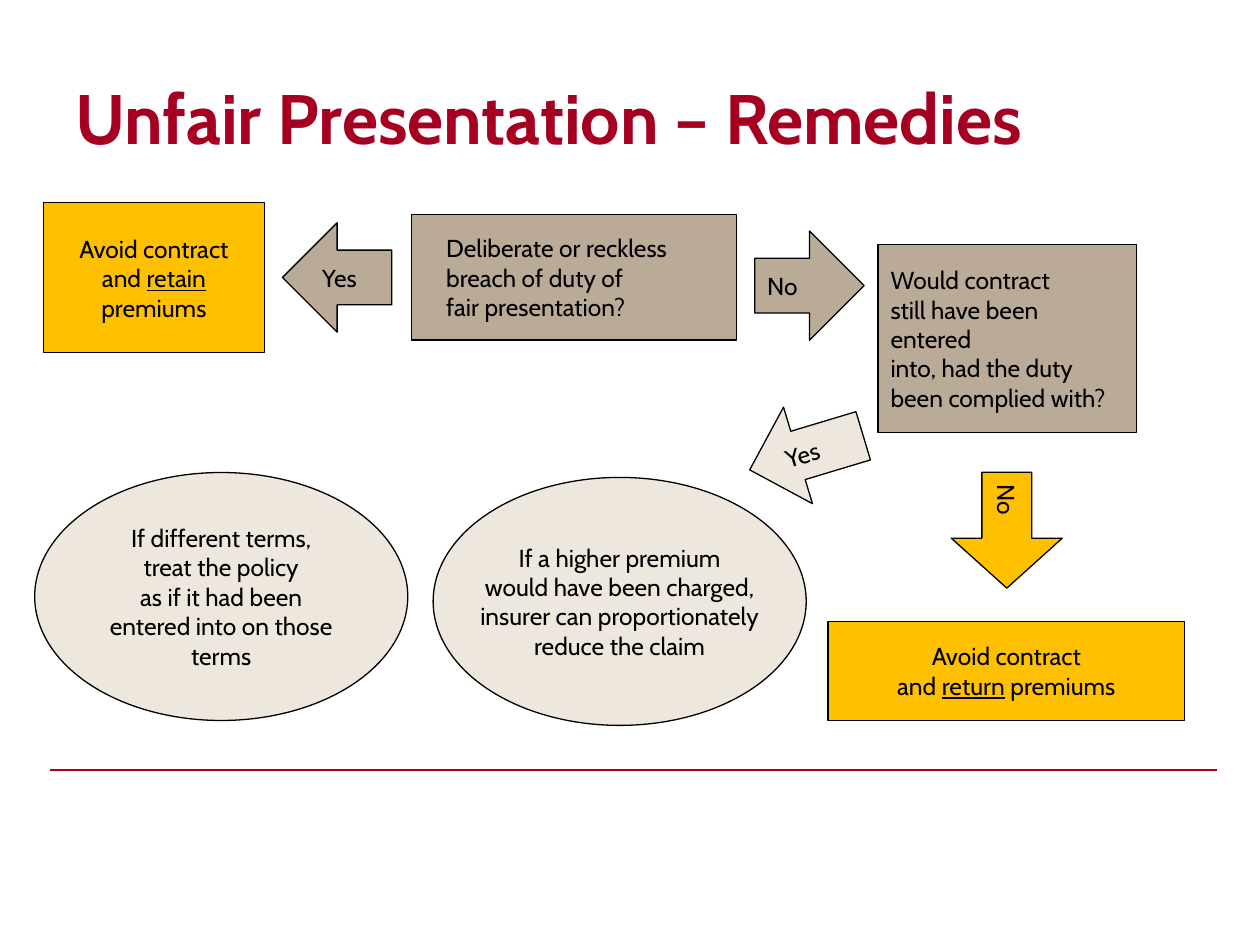
from dataclasses import dataclass

from pptx import Presentation
from pptx.dml.color import RGBColor
from pptx.enum.shapes import MSO_CONNECTOR, MSO_SHAPE as Form
from pptx.enum.text import MSO_ANCHOR as Anchor, PP_ALIGN as Align
from pptx.oxml.ns import qn
from pptx.util import Pt
from lxml.etree import SubElement


@dataclass(frozen=True)
class Theme:
    font: str = "Cabin"
    title_size: float = 40
    body_size: float = 14
    outline_width: float = 0.75
    rule_width: float = 1.5
    crimson: str = "A50021"
    ink: str = "000000"
    question: str = "B9AB97"
    outcome: str = "FFC000"
    option: str = "EDE7DD"


class RemediesSlide:
    """Holds the theme and the slide being drawn; lengths are in points."""

    def __init__(self, deck, theme):
        self.theme = theme
        self.slide = deck.slides.add_slide(deck.slide_layouts[5])

    def style(self, paragraph, size, color, align, bold=False):
        paragraph.alignment = align
        font = paragraph.font
        font.name, font.size, font.bold = self.theme.font, Pt(size), bold
        font.color.rgb = RGBColor.from_string(color)

    def title(self, text, left, top, width, height):
        holder = self.slide.shapes.title
        holder.left, holder.top = Pt(left), Pt(top)
        holder.width, holder.height = Pt(width), Pt(height)
        frame = holder.text_frame
        frame.text, frame.vertical_anchor = text, Anchor.MIDDLE
        self.style(frame.paragraphs[0], self.theme.title_size,
                   self.theme.crimson, Align.LEFT, bold=True)

    def rule(self, left, right, y):
        line = self.slide.shapes.add_connector(
            MSO_CONNECTOR.STRAIGHT, Pt(left), Pt(y), Pt(right), Pt(y))
        line.line.color.rgb = RGBColor.from_string(self.theme.crimson)
        line.line.width = Pt(self.theme.rule_width)
        SubElement(line._element.spPr, qn("a:effectLst"))

    def node(self, form, box, fill, lines, align=Align.LEFT, inset=7.2,
             rotation=0, adjustments=()):
        """Draw a filled shape; words between underscores are underlined."""
        shape = self.slide.shapes.add_shape(form, *map(Pt, box))
        shape.shadow.inherit = False
        shape.rotation = rotation
        for index, value in enumerate(adjustments):
            shape.adjustments[index] = value
        shape.fill.solid()
        shape.fill.fore_color.rgb = RGBColor.from_string(fill)
        shape.line.color.rgb = RGBColor.from_string(self.theme.ink)
        shape.line.width = Pt(self.theme.outline_width)

        frame = shape.text_frame
        frame.word_wrap, frame.vertical_anchor = False, Anchor.MIDDLE
        frame.margin_left = Pt(inset)
        for index, line in enumerate(lines):
            paragraph = frame.add_paragraph() if index else frame.paragraphs[0]
            self.style(paragraph, self.theme.body_size, self.theme.ink, align)
            for part, words in enumerate(line.split("_")):
                if words:
                    run = paragraph.add_run()
                    run.text = words
                    if part % 2:
                        run.font.underline = True


def main():
    deck = Presentation()
    deck.slide_width, deck.slide_height = Pt(720), Pt(540)
    theme = Theme()
    page = RemediesSlide(deck, theme)

    # Heading and footer rule
    page.rule(28.8, 695.5, 440)
    page.title("Unfair Presentation – Remedies", 36, 21.6, 648, 90)

    # Questions
    page.node(Form.RECTANGLE, (235, 122.8, 186, 71.5), theme.question,
              ["Deliberate or reckless", "breach of duty of",
               "fair presentation?"], inset=20)
    page.node(Form.RECTANGLE, (501.8, 139.8, 147.6, 107.5), theme.question,
              ["Would contract", "still have been", "entered",
               "into, had the duty", "been complied with?"])

    # Answers
    page.node(Form.RIGHT_ARROW, (431.3, 132, 62.5, 62.5), theme.question, ["No"])
    page.node(Form.LEFT_ARROW, (161.4, 127.3, 62.5, 62.5), theme.question, ["Yes"])
    page.node(Form.LEFT_ARROW, (427, 230, 67.7, 57.6), theme.option, ["Yes"],
              rotation=343.3)
    page.node(Form.RIGHT_ARROW, (542.2, 271.3, 66.2, 63.4), theme.outcome, ["No"],
              rotation=90, adjustments=(0.45, 0.45))

    # Avoidance outcomes
    page.node(Form.RECTANGLE, (24.7, 115.9, 126.5, 85.7), theme.outcome,
              ["Avoid contract", "and _retain_", "premiums"], Align.CENTER)
    page.node(Form.RECTANGLE, (473.2, 355, 203.8, 56.7), theme.outcome,
              ["Avoid contract", "and _return_ premiums"], Align.CENTER)

    # Outcomes where the contract stands
    page.node(Form.OVAL, (19.8, 270, 213.2, 141.7), theme.option,
              ["If different terms,", "treat the policy", "as if it had been",
               "entered into on those", "terms"], Align.CENTER)
    page.node(Form.OVAL, (247.5, 272.8, 213.2, 141.7), theme.option,
              ["If a higher premium", "would have been charged,",
               "insurer can proportionately", "reduce the claim"], Align.CENTER)

    deck.save("out.pptx")


if __name__ == "__main__":
    main()
